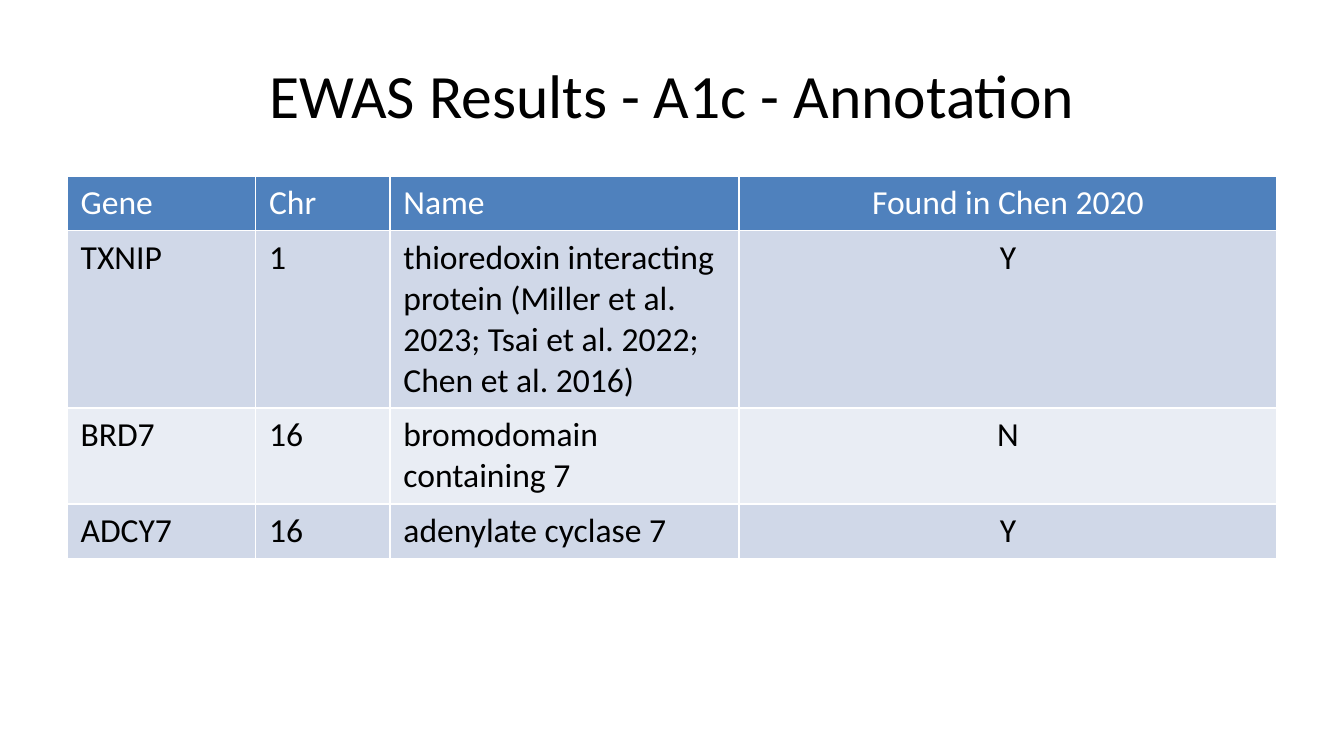
from pptx import Presentation
from pptx.dml.color import RGBColor
from pptx.enum.text import MSO_ANCHOR, MSO_AUTO_SIZE, PP_ALIGN
from pptx.util import Cm, Pt

FONT = "Calibri"
BLACK, WHITE = "000000", "FFFFFF"
HEADER_FILL = "4F81BD"
BAND_FILLS = ["D0D8E8", "E9EDF4"]
COLUMN_WIDTHS = [3.56, 2.54, 6.6, 10.16]
COLUMN_ALIGNMENTS = [PP_ALIGN.LEFT] * 3 + [PP_ALIGN.CENTER]
ROW_HEIGHTS = [1.03, 3.35, 1.81, 1.03]
GENES = [
    ["Gene", "Chr", "Name", "Found in Chen 2020"],
    ["TXNIP", "1", "thioredoxin interacting protein (Miller et al. 2023; "
     "Tsai et al. 2022; Chen et al. 2016)", "Y"],
    ["BRD7", "16", "bromodomain containing 7", "N"],
    ["ADCY7", "16", "adenylate cyclase 7", "Y"],
]


def color(value):
    return RGBColor.from_string(value)


def add_text(text_frame, text, size, text_color, alignment):
    paragraph = text_frame.paragraphs[0]
    paragraph.alignment = alignment
    run = paragraph.add_run()
    run.text = text
    run.font.name = FONT
    run.font.size = Pt(size)
    run.font.bold = False
    run.font.color.rgb = color(text_color)


def set_title(slide, text):
    title = slide.shapes.title
    title.left, title.top = Cm(1.27), Cm(0.58)
    title.width, title.height = Cm(22.86), Cm(2.39)
    title.text_frame.auto_size = MSO_AUTO_SIZE.NONE
    title.text_frame.vertical_anchor = MSO_ANCHOR.MIDDLE
    add_text(title.text_frame, text, 33, BLACK, PP_ALIGN.CENTER)


def fill_cell(cell, text, fill, text_color, alignment):
    cell.fill.solid()
    cell.fill.fore_color.rgb = color(fill)
    add_text(cell.text_frame, text, 18, text_color, alignment)


def add_gene_table(slide):
    table = slide.shapes.add_table(
        len(GENES), len(COLUMN_WIDTHS), Cm(1.27), Cm(3.33),
        Cm(sum(COLUMN_WIDTHS)), Cm(sum(ROW_HEIGHTS))).table
    for column, width in zip(table.columns, COLUMN_WIDTHS):
        column.width = Cm(width)
    for index, (row, height) in enumerate(zip(table.rows, ROW_HEIGHTS)):
        row.height = Cm(height)
        fill = BAND_FILLS[(index - 1) % 2] if index else HEADER_FILL
        text_color = BLACK if index else WHITE
        for cell, text, alignment in zip(row.cells, GENES[index], COLUMN_ALIGNMENTS):
            fill_cell(cell, text, fill, text_color, alignment)


def main():
    presentation = Presentation()
    presentation.slide_width, presentation.slide_height = Cm(25.4), Cm(14.29)
    slide = presentation.slides.add_slide(presentation.slide_layouts[5])
    set_title(slide, "EWAS Results - A1c - Annotation")
    add_gene_table(slide)
    presentation.save("out.pptx")


if __name__ == "__main__":
    main()
